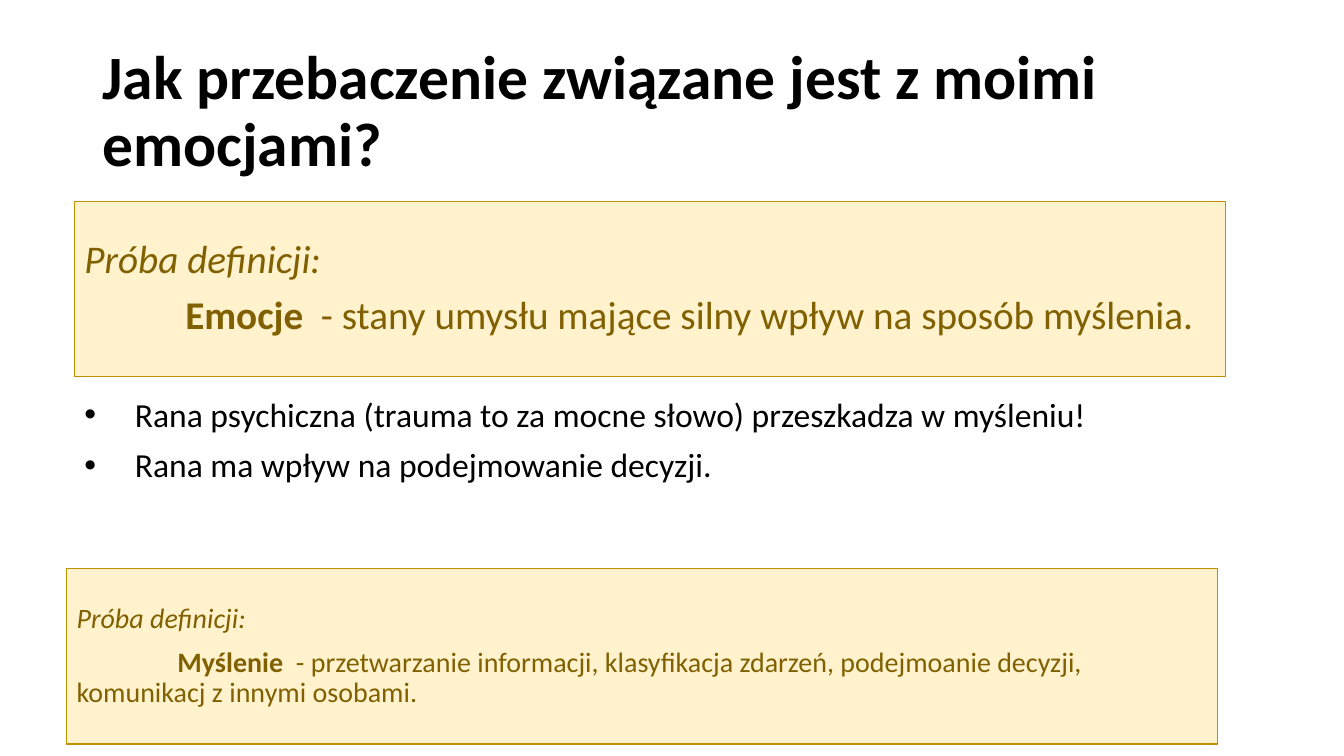
from lxml import etree
from pptx import Presentation
from pptx.dml.color import RGBColor
from pptx.enum.shapes import MSO_SHAPE
from pptx.enum.text import MSO_ANCHOR
from pptx.oxml.ns import qn
from pptx.util import Cm, Pt

RECT = MSO_SHAPE.RECTANGLE
TOP, MIDDLE = MSO_ANCHOR.TOP, MSO_ANCHOR.MIDDLE
COLORS = {"text": "000000", "fill": "FFF2CC", "line": "BF9000", "gold": "806000"}


def rgb(name):
    return RGBColor.from_string(COLORS[name])


def add_run(p, text, size, color="text", bold=False, italic=False, font="Calibri"):
    r = p.add_run()
    r.text = text
    r.font.name = font
    r.font.size = Pt(size)
    r.font.bold = bold
    r.font.italic = italic
    r.font.color.rgb = rgb(color)


class Deck:
    """Holds the paragraph style and the current slide."""

    def __init__(self, prs, line_spacing=0.9, space_before=10):
        self.s = prs.slides.add_slide(prs.slide_layouts[6])
        self.line_spacing = line_spacing
        self.space_before = Pt(space_before)

    def frame(self, sp, anchor):
        tf = sp.text_frame
        tf.word_wrap = True
        tf.vertical_anchor = anchor
        return tf

    def paragraph(self, tf, first, margin=0, indent=0):
        p = tf.paragraphs[0] if first else tf.add_paragraph()
        p.line_spacing = self.line_spacing
        p.space_before = self.space_before
        pPr = p._p.get_or_add_pPr()
        pPr.set("marL", str(Cm(margin)))
        pPr.set("indent", str(Cm(indent)))
        pPr.set("algn", "l")
        return p

    def title(self, x, y, w, h, text):
        tf = self.frame(self.s.shapes.add_textbox(Cm(x), Cm(y), Cm(w), Cm(h)), MIDDLE)
        p = self.paragraph(tf, True)
        p.space_before = Pt(0)
        add_run(p, text, 44, bold=True)

    def bullets(self, x, y, w, h, items):
        tf = self.frame(self.s.shapes.add_textbox(Cm(x), Cm(y), Cm(w), Cm(h)), TOP)
        for i, text in enumerate(items):
            p = self.paragraph(tf, i == 0, margin=1.27, indent=-1.27)
            pPr = p._p.get_or_add_pPr()
            etree.SubElement(pPr, qn("a:buFont")).set("typeface", "Arial")
            etree.SubElement(pPr, qn("a:buChar")).set("char", "•")
            add_run(p, text, 24)

    def definition(self, x, y, w, h, term, meaning, size):
        sp = self.s.shapes.add_shape(RECT, Cm(x), Cm(y), Cm(w), Cm(h))
        sp.shadow.inherit = False
        sp.fill.solid()
        sp.fill.fore_color.rgb = rgb("fill")
        sp.line.color.rgb = rgb("line")
        sp.line.width = Pt(0.75)
        tf = self.frame(sp, MIDDLE)
        add_run(self.paragraph(tf, True), "Próba definicji:", size, "gold", italic=True)
        p = self.paragraph(tf, False, indent=2.54)
        add_run(p, term + " ", size, "gold", bold=True)
        add_run(p, " - " + meaning, size, "gold")


def main():
    prs = Presentation()
    prs.slide_width, prs.slide_height = Cm(33.87), Cm(19.05)
    deck = Deck(prs)
    deck.title(2.33, 1.01, 29.21, 3.68, "Jak przebaczenie związane jest z moimi emocjami?")
    deck.bullets(1.88, 9.91, 29.21, 4.42, [
        "Rana psychiczna (trauma to za mocne słowo) przeszkadza w myśleniu!",
        "Rana ma wpływ na podejmowanie decyzji.",
    ])
    deck.definition(1.88, 5.07, 29.01, 4.42, "Emocje",
                    "stany umysłu mające silny wpływ na sposób myślenia.", 28)
    deck.definition(1.68, 14.33, 29.01, 4.42, "Myślenie",
                    "przetwarzanie informacji, klasyfikacja zdarzeń, podejmoanie decyzji, "
                    "komunikacj z innymi osobami.", 20)
    prs.save("out.pptx")


if __name__ == "__main__":
    main()
